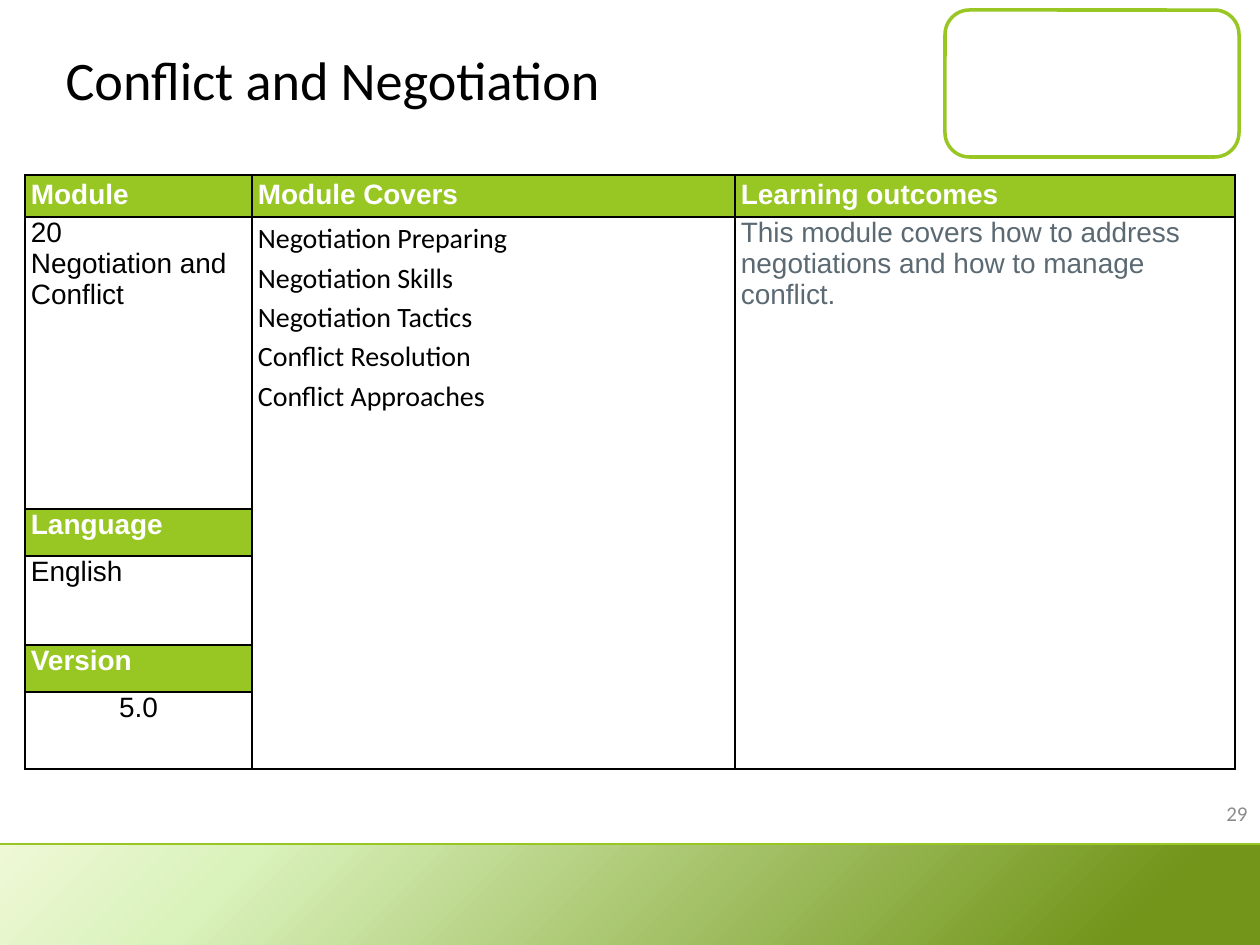
from copy import deepcopy

from lxml import etree
from pptx import Presentation
from pptx.dml.color import RGBColor
from pptx.enum.shapes import MSO_CONNECTOR, MSO_SHAPE
from pptx.enum.text import MSO_ANCHOR, PP_ALIGN
from pptx.oxml.ns import qn
from pptx.util import Pt

PX = 914400 / 126
RECT, ROUND = MSO_SHAPE.RECTANGLE, MSO_SHAPE.ROUNDED_RECTANGLE
STRAIGHT = MSO_CONNECTOR.STRAIGHT
LEFT, MID, RIGHT = PP_ALIGN.LEFT, PP_ALIGN.CENTER, PP_ALIGN.RIGHT
CENTRE = MSO_ANCHOR.MIDDLE

BLACK = RGBColor(0x00, 0x00, 0x00)
WHITE = RGBColor(0xFF, 0xFF, 0xFF)
GREEN = RGBColor(0x98, 0xC7, 0x23)
GREY = RGBColor(0x8C, 0x8C, 0x8C)
SLATE = RGBColor(0x5B, 0x69, 0x73)
FADE = [
    (0, RGBColor(0xEE, 0xF8, 0xD5)),
    (0.19, RGBColor(0xDA, 0xF2, 0xBC)),
    (0.89, RGBColor(0x72, 0x95, 0x1A)),
]

COLS = [227, 483, 500]
ROWS = [42, 292, 47, 89, 47, 77]
COVERS = [
    "Negotiation Preparing",
    "Negotiation Skills",
    "Negotiation Tactics",
    "Conflict Resolution",
    "Conflict Approaches",
]
OUTCOME = ("This module covers how to address negotiations "
           "and how to manage conflict.")
HEADS = {
    (0, 0): "Module",
    (0, 1): "Module Covers",
    (0, 2): "Learning outcomes",
    (2, 0): "Language",
    (4, 0): "Version",
}


def emu(*sizes):
    return [round(size * PX) for size in sizes]


class Page:
    def __init__(self, deck):
        self.slide = deck.slides.add_slide(deck.slide_layouts[5])
        self.shapes = self.slide.shapes

    def style(self, frame, text, size, color, font="Calibri", bold=False,
              align=LEFT, space=None):
        """Fill a text frame and format each of its runs."""
        frame.text = text
        frame.word_wrap = True
        for para in frame.paragraphs:
            para.alignment = align
            para.line_spacing = space
            for run in para.runs:
                run.font.name = font
                run.font.size = Pt(size)
                run.font.bold = bold
                run.font.color.rgb = color

    def title(self, box, text):
        shape = self.shapes.title
        shape.left, shape.top, shape.width, shape.height = emu(*box)
        self.style(shape.text_frame, text, 31, BLACK)
        shape.text_frame.vertical_anchor = CENTRE

    def label(self, box, text, size, color, align):
        frame = self.shapes.add_textbox(*emu(*box)).text_frame
        self.style(frame, text, size, color, align=align)
        frame.vertical_anchor = CENTRE

    def frame(self, box, line, width):
        shape = self.shapes.add_shape(ROUND, *emu(*box))
        shape.shadow.inherit = False
        shape.fill.solid()
        shape.fill.fore_color.rgb = WHITE
        shape.line.color.rgb = line
        shape.line.width = Pt(width)

    def band(self, box, stops):
        """Draw a borderless bar that fades towards its lower right."""
        shape = self.shapes.add_shape(RECT, *emu(*box))
        shape.shadow.inherit = False
        shape.line.fill.background()
        shape.fill.gradient()
        shape.fill.gradient_angle = 315
        marks = next(shape._element.iter(qn("a:gsLst")))
        while len(marks) < len(stops):
            marks.append(deepcopy(marks[0]))
        for mark, (place, color) in zip(shape.fill.gradient_stops, stops):
            mark.position = place
            mark.color.rgb = color

    def rule(self, start, end, color, width):
        line = self.shapes.add_connector(STRAIGHT, *emu(*start, *end))
        line.line.color.rgb = color
        line.line.width = Pt(width)
        etree.SubElement(line._element.spPr, qn("a:effectLst"))

    def grid(self, left, top, cols, rows):
        box = emu(left, top, sum(cols), sum(rows))
        table = self.shapes.add_table(len(rows), len(cols), *box).table
        table.first_row = table.horz_banding = False
        for col, width in zip(table.columns, emu(*cols)):
            col.width = width
        for row, height in zip(table.rows, emu(*rows)):
            row.height = height
        for cell in table.iter_cells():
            cell.margin_left, cell.margin_right = emu(6, 6)
            cell.margin_top = cell.margin_bottom = 0
            cell.fill.background()
            self.edge(cell)
        return table

    def edge(self, cell):
        """Give all four sides of a cell a thin black border."""
        props = cell._tc.get_or_add_tcPr()
        for spot, side in enumerate(("lnL", "lnR", "lnT", "lnB")):
            line = etree.Element(qn("a:" + side), w=str(Pt(1)))
            fill = etree.SubElement(line, qn("a:solidFill"))
            etree.SubElement(fill, qn("a:srgbClr"), val=str(BLACK))
            props.insert(spot, line)

    def cell(self, cell, text, color=BLACK, fill=None, font="Arial", **looks):
        self.style(cell.text_frame, text, 16, color, font, **looks)
        if fill:
            cell.fill.solid()
            cell.fill.fore_color.rgb = fill


def main():
    deck = Presentation()
    deck.slide_width, deck.slide_height = emu(1260, 945)
    page = Page(deck)
    page.frame((945, 10, 294, 147), GREEN, 2)
    page.band((0, 845, 1260, 103), FADE)
    page.rule((0, 844), (1260, 844), GREEN, 1.5)
    page.title((53, 0, 850, 158), "Conflict and Negotiation")
    page.label((966, 788, 294, 50), "29", 12, GREY, RIGHT)

    table = page.grid(25, 175, COLS, ROWS)
    for col in (1, 2):
        table.cell(1, col).merge(table.cell(5, col))
    for (row, col), text in HEADS.items():
        page.cell(table.cell(row, col), text, WHITE, GREEN, bold=True,
                  space=None if row else 1.15)
    page.cell(table.cell(1, 0), "20\nNegotiation and Conflict")
    page.cell(table.cell(1, 1), "\n".join(COVERS), font="Calibri", space=1.15)
    page.cell(table.cell(1, 2), OUTCOME, SLATE)
    page.cell(table.cell(3, 0), "English")
    page.cell(table.cell(5, 0), "5.0", align=MID)
    deck.save("out.pptx")


if __name__ == "__main__":
    main()
